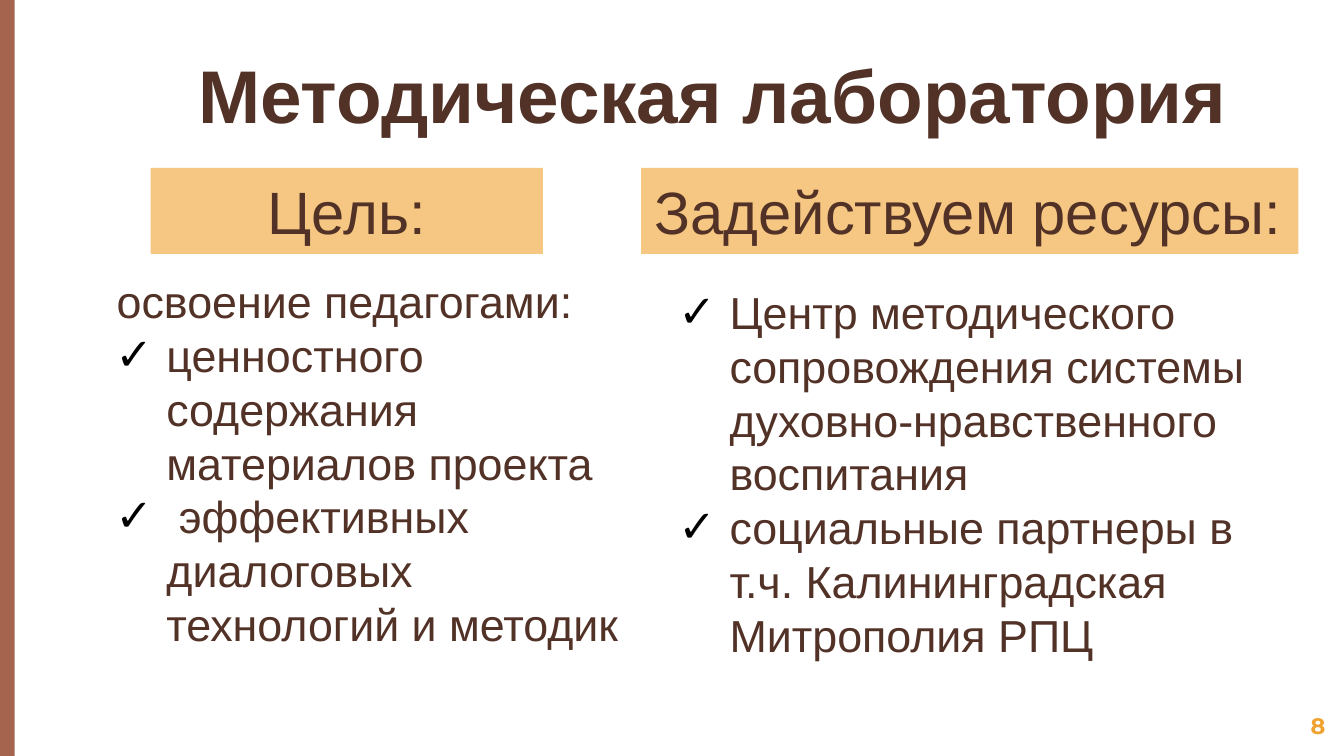
from dataclasses import dataclass

from pptx import Presentation
from pptx.dml.color import RGBColor
from pptx.enum.shapes import MSO_SHAPE as SHAPE
from pptx.enum.text import MSO_ANCHOR as ANCHOR, PP_ALIGN as ALIGN
from pptx.oxml import parse_xml
from pptx.oxml.ns import nsdecls
from pptx.util import Inches, Pt


@dataclass(frozen=True)
class Theme:
    text: str = "523227"
    stripe: str = "A5644E"
    band: str = "F6C782"
    number: str = "F0A22E"
    bullet: str = "000000"
    font: str = "Arial"
    number_font: str = "Montserrat"
    title_size: float = 40
    heading_size: float = 32
    body_size: float = 24
    number_size: float = 12
    body_spacing: float = 28.8


THEME = Theme()


def style(p, size, color=THEME.text, font=THEME.font, bold=False, align=ALIGN.LEFT):
    p.alignment = align
    for r in p.runs:
        r.font.size, r.font.name, r.font.bold = Pt(size), font, bold
        r.font.color.rgb = RGBColor.from_string(color)


def set_frame(tf, inset, anchor):
    tf.word_wrap = True
    tf.vertical_anchor = anchor
    tf.margin_left = tf.margin_right = Inches(0.1)
    tf.margin_top = tf.margin_bottom = Inches(inset)


def add_box(s, box, color):
    sp = s.shapes.add_shape(SHAPE.RECTANGLE, *map(Inches, box))
    sp.fill.solid()
    sp.fill.fore_color.rgb = RGBColor.from_string(color)
    sp.line.fill.background()
    sp.shadow.inherit = False
    return sp


def add_heading(s, box, text, align):
    tf = add_box(s, box, THEME.band).text_frame
    set_frame(tf, 0.05, ANCHOR.TOP)
    tf.text = text
    style(tf.paragraphs[0], THEME.heading_size, align=align)


def add_text(s, box, text, inset=0.1, anchor=ANCHOR.TOP, **look):
    tf = s.shapes.add_textbox(*map(Inches, box)).text_frame
    set_frame(tf, inset, anchor)
    tf.text = text
    for p in tf.paragraphs:
        style(p, **look)
    return tf


def set_indent(p, left, first=0.0):
    pPr = p._p.get_or_add_pPr()
    pPr.set("marL", str(Inches(left)))
    pPr.set("indent", str(Inches(first)))
    return pPr


def add_check(p):
    pPr = set_indent(p, 0.67, -0.38)
    ns = nsdecls("a")
    pPr.append(parse_xml(f'<a:buClr {ns}><a:srgbClr val="{THEME.bullet}"/></a:buClr>'))
    pPr.append(parse_xml(f'<a:buFont {ns} typeface="{THEME.font}"/>'))
    pPr.append(parse_xml(f'<a:buChar {ns} char="✓"/>'))


def add_checklist(s, box, items, intro=None):
    lines = ([intro] if intro else []) + items
    tf = add_text(s, box, "\n".join(lines), inset=0.05, size=THEME.body_size)
    for i, p in enumerate(tf.paragraphs):
        p.line_spacing = Pt(THEME.body_spacing)
        if intro and i == 0:
            set_indent(p, 0.3)
        else:
            add_check(p)


def main():
    # Widescreen 16:9
    prs = Presentation()
    prs.slide_width = Inches(10)
    prs.slide_height = prs.slide_width * 9 // 16
    s = prs.slides.add_slide(prs.slide_layouts[6])

    # Side stripe, title and slide number
    add_box(s, (0, 0, 0.11, prs.slide_height.inches), THEME.stripe)
    add_text(s, (1.24, 0.13, 8.12, 1.13), "Методическая лаборатория",
             anchor=ANCHOR.MIDDLE, size=THEME.title_size, bold=True, align=ALIGN.CENTER)
    add_text(s, (9.36, 5.2, 0.6, 0.34), "8", size=THEME.number_size, color=THEME.number,
             font=THEME.number_font, bold=True, align=ALIGN.RIGHT)

    # Goal
    add_heading(s, (1.12, 1.25, 2.92, 0.64), "Цель:", ALIGN.CENTER)
    add_checklist(s, (0.47, 1.99, 4.23, 3.33),
                  ["ценностного содержания материалов проекта",
                   " эффективных диалоговых технологий и методик"],
                  intro="освоение педагогами:")

    # Resources
    add_heading(s, (4.77, 1.25, 4.89, 0.64), "Задействуем ресурсы:", ALIGN.LEFT)
    add_checklist(s, (4.66, 2.07, 5, 2.93),
                  ["Центр методического сопровождения системы духовно-нравственного воспитания",
                   "социальные партнеры в т.ч. Калининградская Митрополия РПЦ"])

    prs.save("out.pptx")


if __name__ == "__main__":
    main()
